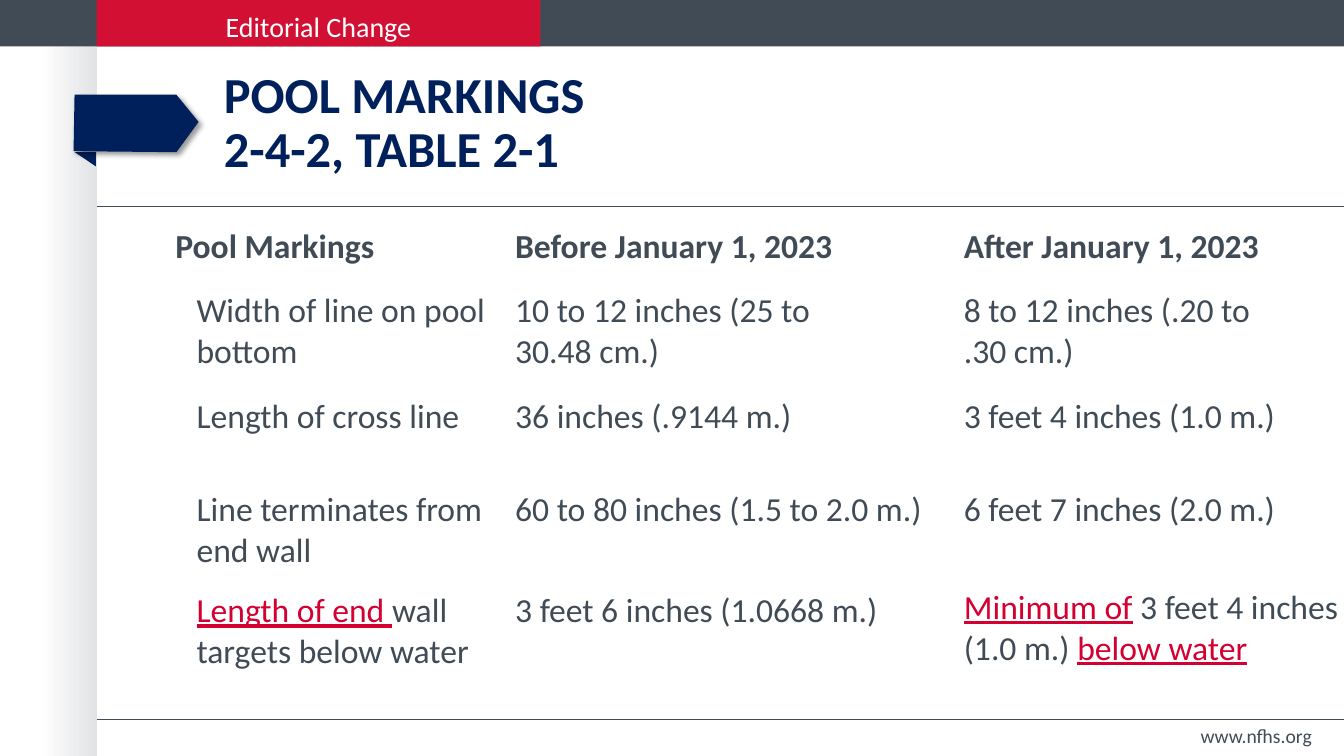
from lxml.etree import SubElement
from pptx import Presentation
from pptx.dml.color import RGBColor
from pptx.enum.shapes import MSO_CONNECTOR, MSO_SHAPE
from pptx.enum.text import MSO_ANCHOR, MSO_AUTO_SIZE, PP_ALIGN
from pptx.oxml import parse_xml
from pptx.oxml.ns import qn
from pptx.util import Inches, Pt

HUES = {"slate": "414B56", "red": "D21034", "mark": "D50032",
        "navy": "00205B", "white": "FFFFFF", "edge": "E2E3E4"}
FONT = "Calibri"

TITLE = "POOL MARKINGS\v2-4-2, TABLE 2-1"
TAG = "Editorial Change"
SITE = "www.nfhs.org"
HEADS = ["Pool Markings", "Before January 1, 2023", "After January 1, 2023"]

# Each cell lists (space before, text) lines; *stars* wrap revised wording.
UPPER = [
    [[(0, "Width of line on pool bottom")],
     [(0, "10 to 12 inches (25 to \v30.48 cm.)")],
     [(0, "8 to 12 inches (.20 to \v.30 cm.)")]],
    [[(0, "Length of cross line")],
     [(0, "36 inches (.9144 m.)")],
     [(0, "3 feet 4 inches (1.0 m.)")]],
]
LOWER = [
    [[(0, "Line terminates from end wall"),
      (13.4, "*Length of end *wall\vtargets below water")],
     [(0, "60 to 80 inches (1.5 to 2.0 m.)"),
      (42.7, "3 feet 6 inches (1.0668 m.)")],
     [(0, "6 feet 7 inches (2.0 m.)"),
      (40.3, "*Minimum of* 3 feet 4 inches"),
      (0, "(1.0 m.) *below water*")]],
]
COLS = [3.16, 4.45, 4.26]
GRIDS = [(2.88, [0.87, 0.87], [0, 0.19], UPPER),
         (4.86, [1.78], [0], LOWER)]
TABS = [3.37, 7.82]
BARS = [(0, 13.33, "slate"), (0.96, 4.4, "red")]
RULES = [2.05, 7.14]
FOLD = [(0.74, 1.51), (0.95, 1.51), (0.95, 1.65)]
ARROW = [(0.74, 0.94), (0.73, 1.5), (1.75, 1.51), (1.97, 1.21), (1.75, 0.94)]
SHADE = ('<a:effectLst xmlns:a="http://schemas.openxmlformats.org/drawingml/2006/main">'
         '<a:outerShdw blurRad="50800" dist="38100" dir="2700000">'
         '<a:srgbClr val="000000"><a:alpha val="40000"/></a:srgbClr>'
         '</a:outerShdw></a:effectLst>')


def hue(name):
    return RGBColor.from_string(HUES[name])


def style(font, size, name, bold=False):
    font.name, font.size, font.bold = FONT, Pt(size), bold
    font.color.rgb = hue(name)


def rect(slide, *box):
    shape = slide.shapes.add_shape(MSO_SHAPE.RECTANGLE, *map(Inches, box))
    shape.shadow.inherit = False
    shape.line.fill.background()
    return shape


def patch(slide, points):
    first, *rest = [(Inches(x), Inches(y)) for x, y in points]
    pen = slide.shapes.build_freeform(*first)
    pen.add_line_segments(rest, close=True)
    shape = pen.convert_to_shape()
    shape.shadow.inherit = False
    shape.fill.solid()
    shape.fill.fore_color.rgb = hue("navy")
    shape.line.fill.background()
    return shape


def label(slide, text, box, size, name, align, bold=False):
    frame = slide.shapes.add_textbox(*map(Inches, box)).text_frame
    frame.word_wrap = True
    frame.text = text
    para = frame.paragraphs[0]
    para.alignment = align
    for run in para.runs:
        style(run.font, size, name, bold)
    return frame


def write(cell, lines, top):
    cell.fill.background()
    cell.margin_left = cell.margin_right = Inches(0.14)
    cell.margin_top, cell.margin_bottom = Inches(top), 0
    frame = cell.text_frame
    for i, (gap, text) in enumerate(lines):
        para = frame.add_paragraph() if i else frame.paragraphs[0]
        if gap:
            para.space_before = Pt(gap)
        for j, part in enumerate(text.split("*")):
            for k, piece in enumerate(part.split("\v")):
                if k:
                    para.add_line_break()
                if piece:
                    run = para.add_run()
                    run.text = piece
                    style(run.font, 24, "mark" if j % 2 else "slate")
                    run.font.underline = bool(j % 2)


def grid(slide, top, highs, pads, rows):
    table = slide.shapes.add_table(
        len(rows), len(COLS), Inches(1.81), Inches(top),
        Inches(sum(COLS)), Inches(sum(highs))).table
    table.first_row = table.horz_banding = False
    for col, wide in zip(table.columns, COLS):
        col.width = Inches(wide)
    for r, row in enumerate(rows):
        table.rows[r].height = Inches(highs[r])
        for c, lines in enumerate(row):
            write(table.cell(r, c), lines, pads[r])


def main():
    deck = Presentation()
    deck.slide_width, deck.slide_height = Inches(13.33), Inches(7.5)
    slide = deck.slides.add_slide(deck.slide_layouts[5])

    side = rect(slide, 0.4, 0.45, 0.56, 7.05)
    side.fill.gradient()
    side.fill.gradient_angle = 0
    for stop, name in zip(side.fill.gradient_stops, ["white", "edge"]):
        stop.color.rgb = hue(name)
    for left, wide, name in BARS:
        bar = rect(slide, left, 0, wide, 0.46)
        bar.fill.solid()
        bar.fill.fore_color.rgb = hue(name)
    for y in RULES:
        rule = slide.shapes.add_connector(
            MSO_CONNECTOR.STRAIGHT, Inches(0.96), Inches(y), Inches(13.33), Inches(y))
        rule.line.color.rgb = hue("slate")
        rule.line.width = Pt(1)
        SubElement(rule._element.spPr, qn("a:effectLst"))

    patch(slide, FOLD)
    props = patch(slide, ARROW)._element.spPr
    props.replace(props.find(qn("a:effectLst")), parse_xml(SHADE))

    title = slide.shapes.title
    title.left, title.top = Inches(2.12), Inches(0.57)
    title.width, title.height = Inches(10.97), Inches(1.32)
    frame = title.text_frame
    frame.text = TITLE
    frame.auto_size = MSO_AUTO_SIZE.NONE
    frame.vertical_anchor = MSO_ANCHOR.MIDDLE
    para = frame.paragraphs[0]
    para.alignment = PP_ALIGN.LEFT
    para.line_spacing = Pt(38)
    for run in para.runs:
        style(run.font, 36, "navy", True)

    label(slide, TAG, (0.96, 0.05, 4.4, 0.44), 20, "white", PP_ALIGN.CENTER)
    heads = label(slide, "\t".join(HEADS), (1.64, 2.18, 11.45, 0.5),
                  24, "slate", PP_ALIGN.LEFT, True)
    stops = SubElement(heads.paragraphs[0]._p.get_or_add_pPr(), qn("a:tabLst"))
    for at in TABS:
        SubElement(stops, qn("a:tab"), pos=str(Inches(at)), algn="l")
    site = label(slide, SITE, (10.93, 7.14, 2.18, 0.32), 14, "slate", PP_ALIGN.RIGHT)
    site.vertical_anchor = MSO_ANCHOR.MIDDLE

    for part in GRIDS:
        grid(slide, *part)
    deck.save("out.pptx")


if __name__ == "__main__":
    main()
